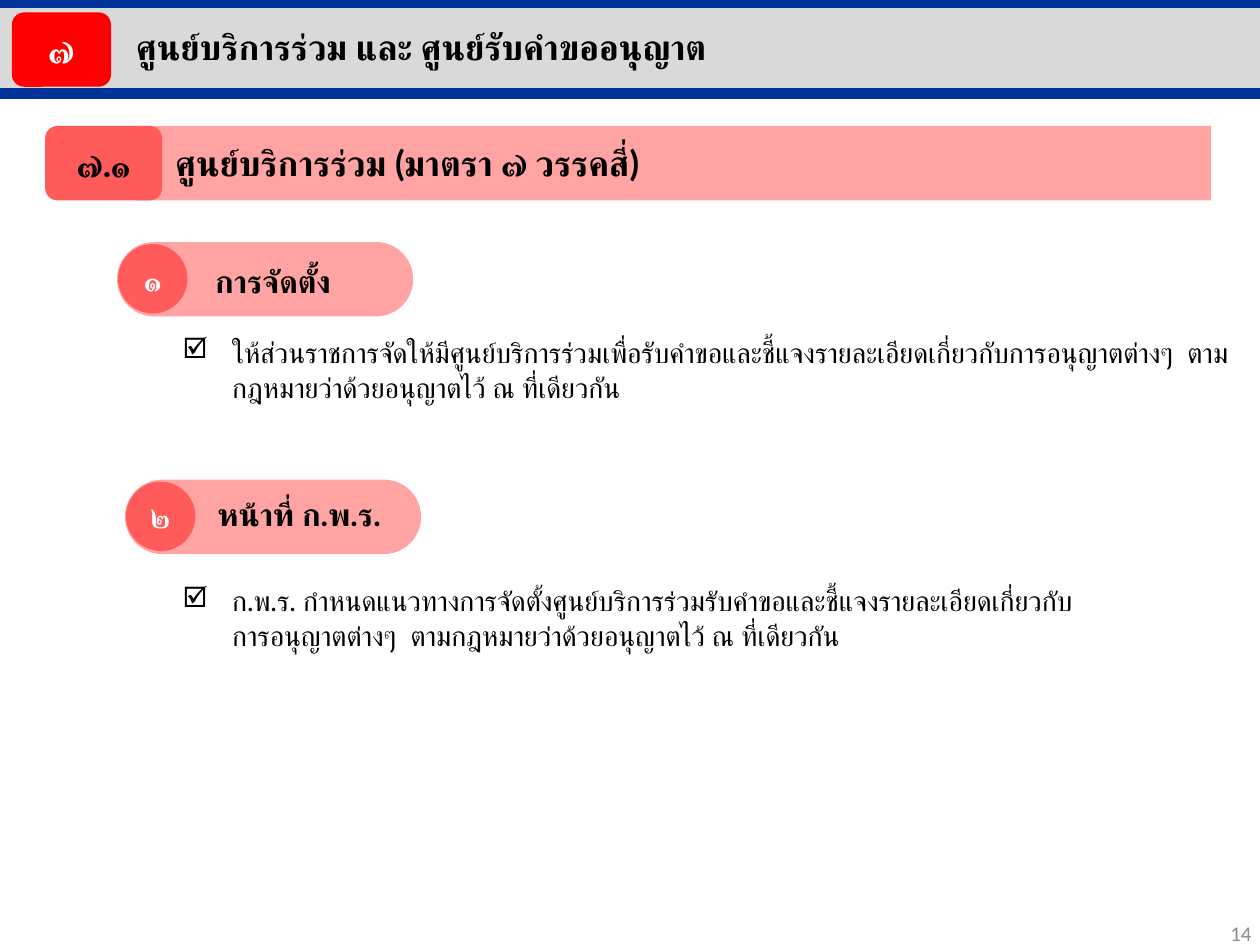
"""Build the slide on joint service centres and their duties."""
from lxml.etree import SubElement
from pptx import Presentation
from pptx.dml.color import RGBColor
from pptx.enum.shapes import MSO_CONNECTOR, MSO_SHAPE
from pptx.enum.text import MSO_ANCHOR, PP_ALIGN
from pptx.oxml.ns import qn
from pptx.util import Cm, Pt

BLACK = RGBColor(0, 0, 0)
WHITE = RGBColor(255, 255, 255)
GREY = RGBColor(0xD9, 0xD9, 0xD9)
DIM = RGBColor(0x8C, 0x8C, 0x8C)
BLUE = RGBColor(0, 0x33, 0x99)
RED = RGBColor(255, 0, 0)
CORAL = RGBColor(0xFF, 0x5B, 0x5B)
PINK = RGBColor(0xFF, 0xA3, 0xA3)

WIDE, HIGH = 25.4, 19.05
RULES = [1.88, 0.05]
TITLE = ("๗", "ศูนย์บริการร่วม และ ศูนย์รับคำขออนุญาต")
HEAD = ("๗.๑", "ศูนย์บริการร่วม (มาตรา ๗ วรรคสี่)")
PAGE = "14"
PARTS = [
    dict(mark="๑", name="การจัดตั้ง", left=2.36, top=4.88, shift=(1.73, 0.28, 3.25),
         note="ให้ส่วนราชการจัดให้มีศูนย์บริการร่วมเพื่อรับคำขอและชี้แจงรายละเอียดเกี่ยวกับการอนุญาตต่างๆ  "
              "ตามกฎหมายว่าด้วยอนุญาตไว้ ณ ที่เดียวกัน", base=6.6),
    dict(mark="๒", name="หน้าที่ ก.พ.ร.", left=2.52, top=9.67, shift=(1.62, 0.19, 4.29),
         note="ก.พ.ร. กำหนดแนวทางการจัดตั้งศูนย์บริการร่วมรับคำขอและชี้แจงรายละเอียดเกี่ยวกับ\n"
              "การอนุญาตต่างๆ  ตามกฎหมายว่าด้วยอนุญาตไว้ ณ ที่เดียวกัน", base=11.61),
]

BIG = dict(size=Pt(20), bold=True, name="Lato")
MID = dict(size=Pt(18), bold=True, name="Lato")
BODY = dict(size=Pt(16), name="Lato")
SMALL = dict(size=Pt(12), name="Calibri")
INSET = ("margin_left", "margin_top", "margin_right", "margin_bottom")


def put(item, **vals):
    for key, val in vals.items():
        setattr(item, key, val)


def write(box, text, form, hue, **look):
    para = box.text_frame.paragraphs[0]
    para.text = text
    put(para, **look)
    for run in para.runs:
        put(run.font, **form)
        run.font.color.rgb = hue
        SubElement(run.font._element, qn("a:cs"), typeface=form["name"])
    return para


def block(home, kind, area, fill):
    shape = home.add_shape(kind, *map(Cm, area))
    shape.shadow.inherit = False
    shape.fill.solid()
    shape.fill.fore_color.rgb = fill
    shape.line.fill.background()
    return shape


def badge(home, kind, area, fill, text, form, hue):
    shape = block(home, kind, area, fill)
    put(shape.text_frame, vertical_anchor=MSO_ANCHOR.MIDDLE)
    write(shape, text, form, hue, alignment=PP_ALIGN.CENTER)
    return shape


def label(home, area, text, form, hue=BLACK, frame=None, **look):
    box = home.add_textbox(*map(Cm, area))
    put(box.text_frame, **{"word_wrap": True, **(frame or {})})
    return write(box, text, form, hue, **look)


def rule(home, top):
    line = home.add_connector(MSO_CONNECTOR.STRAIGHT, 0, Cm(top), Cm(WIDE), Cm(top))
    line.line.color.rgb = BLUE
    line.line.width = Pt(6)
    SubElement(line._element.spPr, qn("a:effectLst"))


def topic(home, part):
    left, top = part["left"], part["top"]
    group = home.add_group_shape().shapes
    pill = block(group, MSO_SHAPE.ROUNDED_RECTANGLE, (left, top, 5.97, 1.5), PINK)
    pill.adjustments[0] = 0.5
    dot = badge(group, MSO_SHAPE.OVAL, (left + 0.02, top + 0.04, 1.4, 1.4),
                CORAL, part["mark"], MID, WHITE)
    put(dot.text_frame, **dict.fromkeys(INSET, 0))
    right, down, width = part["shift"]
    label(group, (left + right, top + down, width, 1.02), part["name"], MID,
          frame=dict(word_wrap=False))


def note(home, part):
    para = label(home, (3.43, part["base"], 21.74, 1.63), part["note"], BODY,
                 level=1, line_spacing=1.05)
    prop = para._p.get_or_add_pPr()
    prop.set("marL", str(Cm(1)))
    prop.set("indent", str(-Cm(1)))
    SubElement(prop, qn("a:buChar"), char="☑")


def main():
    deck = Presentation()
    put(deck, slide_width=Cm(WIDE), slide_height=Cm(HIGH))
    home = deck.slides.add_slide(deck.slide_layouts[6]).shapes
    block(home, MSO_SHAPE.RECTANGLE, (0, 0.13, WIDE, 1.73), GREY)
    for top in RULES:
        rule(home, top)
    label(home, (19.76, 18.31, 5.72, 1.02), PAGE, SMALL, DIM,
          dict(vertical_anchor=MSO_ANCHOR.MIDDLE), alignment=PP_ALIGN.RIGHT)
    group = home.add_group_shape().shapes
    block(group, MSO_SHAPE.RECTANGLE, (2.74, 2.54, 21.67, 1.5), PINK)
    label(group, (3.28, 2.72, 16.61, 1.12), HEAD[1], BIG)
    badge(group, MSO_SHAPE.ROUNDED_RECTANGLE, (0.91, 2.54, 2.36, 1.5), CORAL, HEAD[0], BIG, BLACK)
    badge(home, MSO_SHAPE.ROUNDED_RECTANGLE, (0.24, 0.25, 2, 1.5), RED, TITLE[0], BIG, WHITE)
    label(home, (2.49, 0.38, 13.79, 1.12), TITLE[1], BIG)
    for part in PARTS:
        topic(home, part)
        note(home, part)
    deck.save("out.pptx")


if __name__ == "__main__":
    main()
